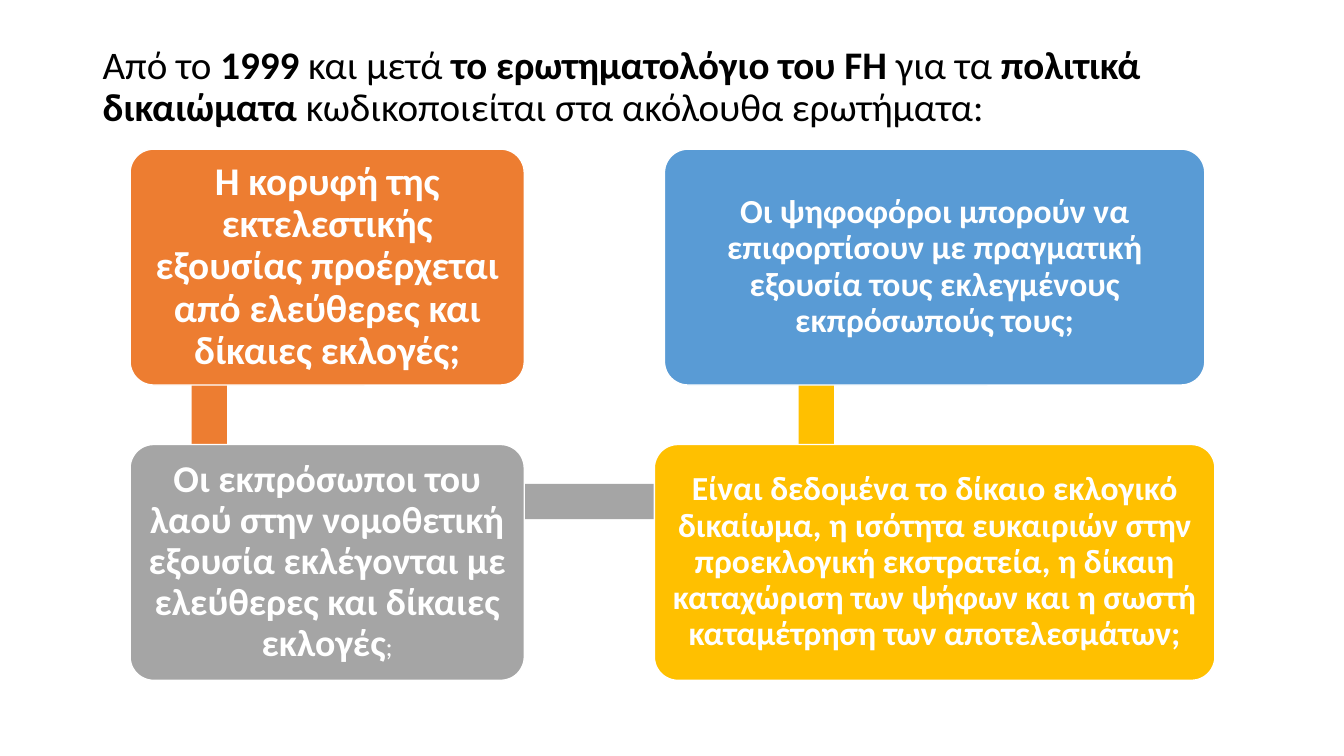
import pptx
import pptx.util
import pptx.dml.color
import pptx.enum.shapes
import pptx.enum.text

Inches = pptx.util.Inches
Pt = pptx.util.Pt
Kind = pptx.enum.shapes.MSO_SHAPE
Align = pptx.enum.text.PP_ALIGN
Anchor = pptx.enum.text.MSO_ANCHOR

TITLE = [
    ("Από το ", False),
    ("1999", True),
    (" και μετά ", False),
    ("το ερωτηματολόγιο του FH", True),
    (" για τα ", False),
    ("πολιτικά δικαιώματα", True),
    (" κωδικοποιείται στα ακόλουθα ερωτήματα:", False),
]
HEAD = "Η κορυφή της εκτελεστικής εξουσίας προέρχεται από ελεύθερες και δίκαιες εκλογές;"
LAW = "Οι εκπρόσωποι του λαού στην νομοθετική εξουσία εκλέγονται με ελεύθερες και δίκαιες εκλογές"
FAIR = ("Είναι δεδομένα το δίκαιο εκλογικό δικαίωμα, η ισότητα ευκαιριών στην "
        "προεκλογική εκστρατεία, η δίκαιη καταχώριση των ψήφων και η σωστή "
        "καταμέτρηση των αποτελεσμάτων;")
POWER = ("Οι ψηφοφόροι μπορούν να επιφορτίσουν με πραγματική εξουσία "
         "τους εκλεγμένους εκπρόσωπούς τους;")

ORANGE, GRAY, GOLD, BLUE = "ED7D31", "A5A5A5", "FFC000", "599BD5"
TALL, STEP, THICK = 2.34, 2.93, 0.35


def color(code):
    return pptx.dml.color.RGBColor.from_string(code)


def apply(target, values):
    for name, value in values.items():
        setattr(target, name, value)


def write(frame, runs, code, align, inset):
    apply(frame, {"word_wrap": True, "vertical_anchor": Anchor.MIDDLE})
    apply(frame, {"margin_" + side: Inches(gap) for side, gap in inset.items()})
    para = frame.paragraphs[0]
    apply(para, {"alignment": align, "line_spacing": 0.9})
    for text, size, bold in runs:
        run = para.add_run()
        run.text = text
        apply(run.font, {"name": "Calibri", "size": Pt(size), "bold": bold})
        run.font.color.rgb = color(code)


def draw(slide, kind, box, code):
    shape = slide.shapes.add_shape(kind, *map(Inches, box))
    shape.shadow.inherit = False
    shape.fill.solid()
    shape.fill.fore_color.rgb = color(code)
    shape.line.fill.background()
    return shape


def title(slide, box):
    frame = slide.shapes.add_textbox(*map(Inches, box)).text_frame
    runs = [(text, 27.9, bold) for text, bold in TITLE]
    inset = {"left": 0.1, "right": 0.1, "top": 0.05, "bottom": 0.05}
    write(frame, runs, "000000", Align.LEFT, inset)


def card(slide, box, code, runs, gap):
    shape = draw(slide, Kind.ROUNDED_RECTANGLE, box, code)
    shape.adjustments[0] = 0.1
    shape.line.color.rgb = color("FFFFFF")
    shape.line.width = Pt(1)
    inset = dict.fromkeys(("left", "right", "top", "bottom"), gap)
    write(shape.text_frame, runs, "FFFFFF", Align.CENTER, inset)


def flow(slide, box):
    left, top, width, height = box
    low = top + STEP
    for x, y, wide, high, code in (
        (0.61, 0.58, THICK, STEP, ORANGE),
        (0.79, 3.32, 6.01, THICK, GRAY),
        (6.63, 0.58, THICK, STEP, GOLD),
    ):
        draw(slide, Kind.RECTANGLE, (left + x, top + y, wide, high), code)
    right = left + width
    for x, y, wide, code, runs, gap in (
        (left, top, 3.91, ORANGE, [(HEAD, 28, True)], 0.12),
        (left, low, 3.91, GRAY, [(LAW, 27, True), (";", 19, False)], 0.11),
        (right - 5.56, low, 5.56, GOLD, [(FAIR, 24, True)], 0.1),
        (right - 5.46, top, 5.36, BLUE, [(POWER, 24, True)], 0.1),
    ):
        card(slide, (x, y, wide, TALL), code, runs, gap)


def main():
    deck = pptx.Presentation()
    apply(deck, {"slide_width": Inches(13.33), "slide_height": Inches(7.5)})
    slide = deck.slides.add_slide(deck.slide_layouts[6])
    title(slide, (0.92, 0.46, 11.5, 0.83))
    flow(slide, (1.29, 1.48, 10.76, 5.27))
    deck.save("out.pptx")


if __name__ == "__main__":
    main()
